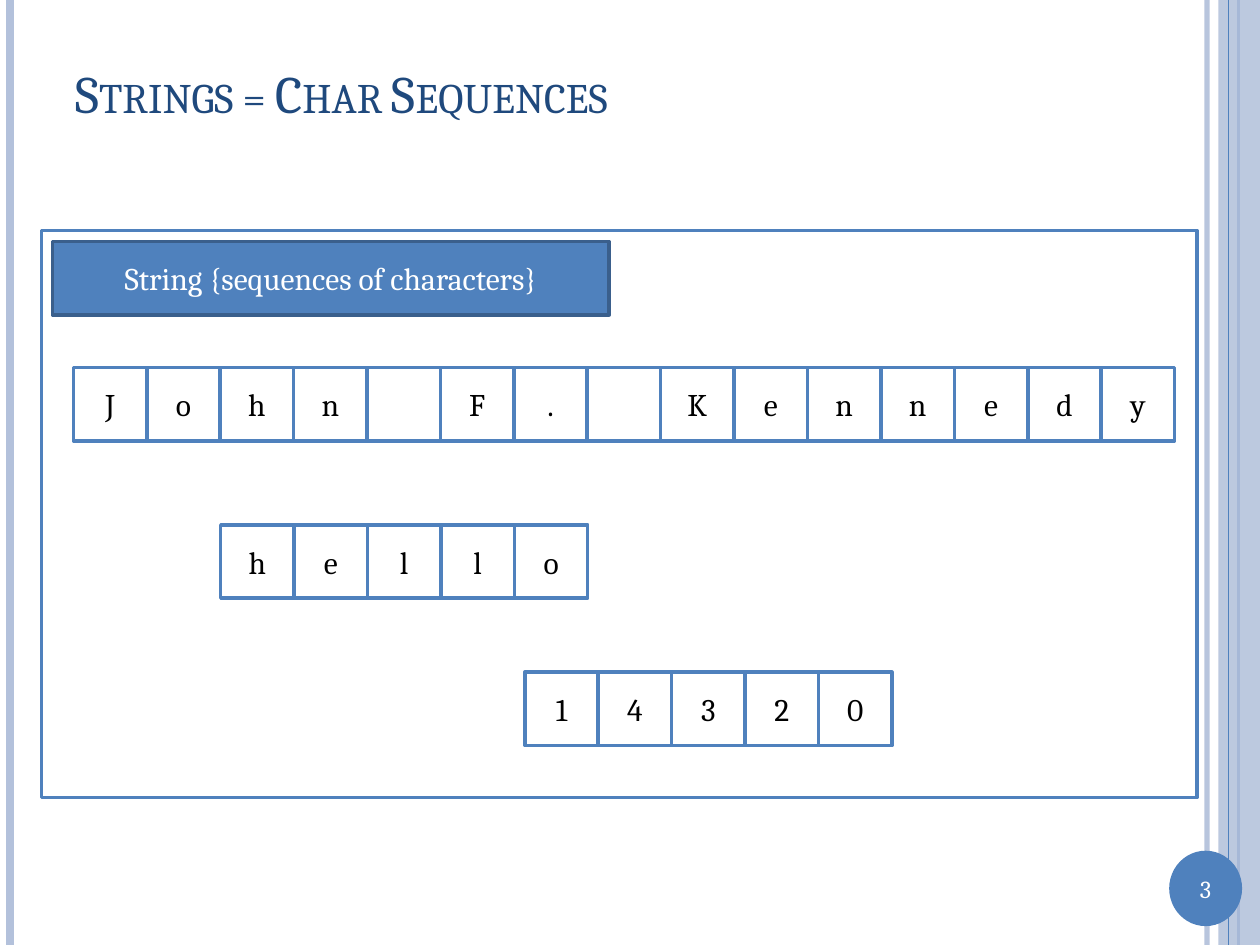
from lxml import etree
from pptx import Presentation
from pptx.dml.color import RGBColor
from pptx.enum.shapes import MSO_CONNECTOR, MSO_SHAPE
from pptx.enum.text import MSO_ANCHOR, PP_ALIGN
from pptx.oxml.ns import qn
from pptx.util import Cm, Pt

RECT, OVAL = MSO_SHAPE.RECTANGLE, MSO_SHAPE.OVAL
STRAIGHT = MSO_CONNECTOR.STRAIGHT
MIDDLE, CENTER, LEFT = MSO_ANCHOR.MIDDLE, PP_ALIGN.CENTER, PP_ALIGN.LEFT
FONT = "Cambria"
COLORS = {
    "accent": "4F81BD",
    "accent_dark": "3A5F8C",
    "stripe": "B3C1DB",
    "title": "1F497D",
    "white": "FFFFFF",
    "black": "000000",
}


def add_box(kind, left, top, width, height, fill, line=None):
    box = slide.shapes.add_shape(kind, Cm(left), Cm(top), Cm(width), Cm(height))
    box.shadow.inherit = False
    box.fill.solid()
    box.fill.fore_color.rgb = RGBColor.from_string(COLORS[fill])
    if line:
        box.line.color.rgb = RGBColor.from_string(COLORS[line])
        box.line.width = Pt(2)
    else:
        box.line.fill.background()
    return box


def write(box, text, size, color, align=CENTER):
    frame = box.text_frame
    frame.word_wrap = True
    frame.vertical_anchor = MIDDLE
    paragraph = frame.paragraphs[0]
    paragraph.text = text
    paragraph.alignment = align
    paragraph.font.name = FONT
    paragraph.font.size = Pt(size)
    paragraph.font.color.rgb = RGBColor.from_string(COLORS[color])
    return paragraph


prs = Presentation()
prs.slide_width, prs.slide_height = Cm(25.4), Cm(19.05)
slide = prs.slides.add_slide(prs.slide_layouts[6])

# Side stripes: x, width in points, colour, opacity in percent
right_band = add_box(RECT, 24.56, 0, 0.84, 19.05, "stripe")
stripes = [
    (24.33, 3, "stripe", 93),
    (0.2, 4.5, "stripe", 100),
    (24.97, 1.5, "accent", 100),
    (24.77, 0.75, "accent", 100),
]
translucent = [(right_band.fill, 87)]
for x, width, color, opacity in stripes:
    stripe = slide.shapes.add_connector(STRAIGHT, Cm(x), 0, Cm(x), Cm(19.05))
    stripe.line.color.rgb = RGBColor.from_string(COLORS[color])
    stripe.line.width = Pt(width)
    etree.SubElement(stripe._element.spPr, qn("a:effectLst"))
    if opacity < 100:
        translucent.append((stripe.line.fill, opacity))
    if x != 24.77:  # only the thinnest stripe lies over the band
        right_band._element.addprevious(stripe._element)

for fill, opacity in translucent:
    srgb = fill._xPr.find(".//" + qn("a:srgbClr"))
    etree.SubElement(srgb, qn("a:alpha"), val=str(opacity * 1000))

# Page number
add_box(OVAL, 23.57, 17.15, 1.47, 1.52, "accent")
page_number = slide.shapes.add_textbox(Cm(23.57), Cm(17.48), Cm(1.47), Cm(0.86))
write(page_number, "3", 14, "white")

# Panel and title
add_box(RECT, 0.84, 4.65, 23.29, 11.43, "white", "accent")
title = slide.shapes.add_textbox(Cm(1.27), Cm(0.76), Cm(22.02), Cm(2.21))
heading = write(title, "Strings = Char Sequences", 30, "title", LEFT)
heading.runs[0].font._element.set("cap", "small")

# Strings, one cell per character
CELL = 1.48
strings = [
    ("John F. Kennedy", 1.48, 7.41),
    ("hello", 4.45, 10.58),
    ("14320", 10.58, 13.55),
]
for string, left, top in strings:
    for i, char in enumerate(string):
        cell = add_box(RECT, left + i * CELL, top, CELL, CELL, "white", "accent")
        if char != " ":
            write(cell, char, 18, "black")

# Panel label
label = add_box(RECT, 1.06, 4.87, 11.22, CELL, "accent", "accent_dark")
write(label, "String {sequences of characters}", 18, "white")

prs.save("out.pptx")
